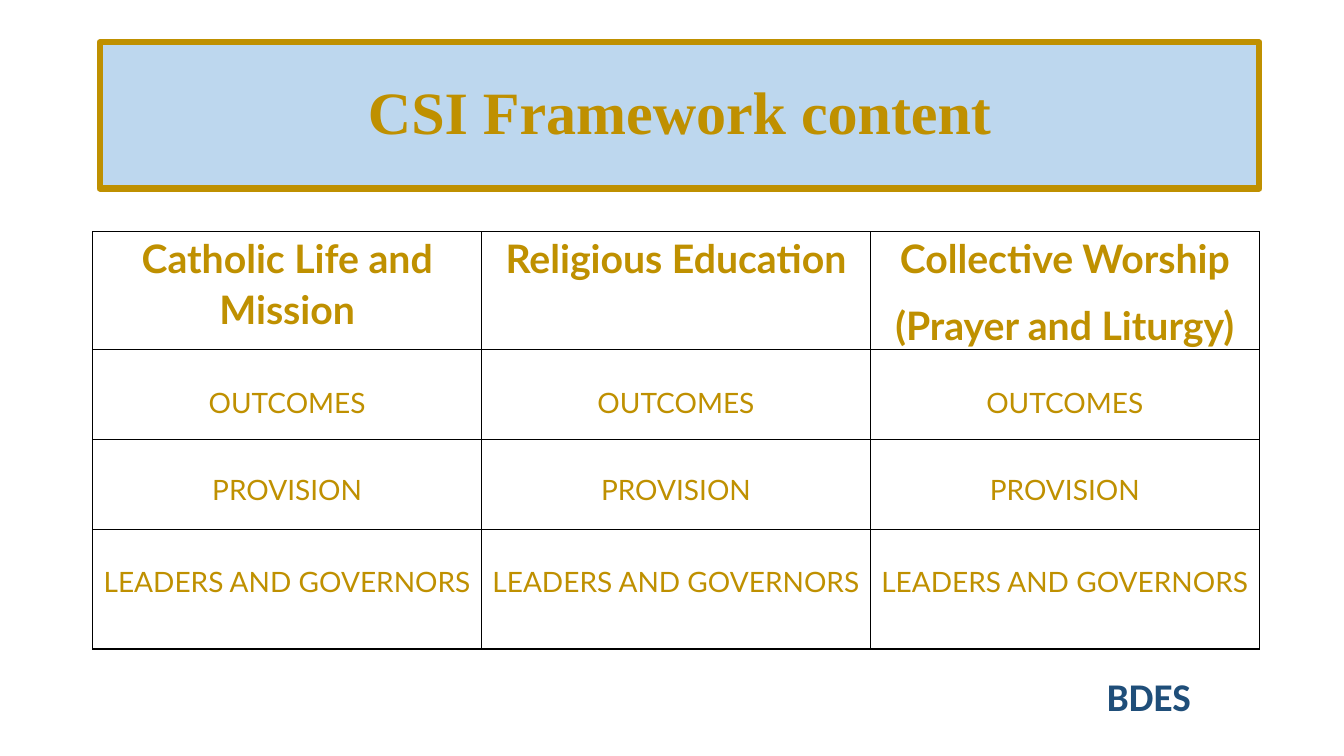
from pptx import Presentation
from pptx.util import Inches, Pt
from pptx.dml.color import RGBColor
from pptx.enum.shapes import MSO_SHAPE as Shape
from pptx.enum.text import PP_ALIGN as Align, MSO_ANCHOR as Anchor, MSO_AUTO_SIZE as AutoSize
from pptx.oxml.ns import qn
from lxml.etree import SubElement

COLORS = {"gold": "BF9000", "sky": "BDD7EE", "navy": "1F4E79", "black": "000000"}
HEADINGS = [["Catholic Life and Mission"], ["Religious Education"],
            ["Collective Worship", "(Prayer and Liturgy)"]]
# Label, row height and top inset in inches
ASPECTS = [("OUTCOMES", 0.89, 0.33), ("PROVISION", 0.89, 0.31),
           ("LEADERS AND GOVERNORS", 1.19, 0.33)]
HEADING_HEIGHT = 1.17


def rgb(name):
    return RGBColor.from_string(COLORS[name])


def add_run(p, text, size, font, color, bold=False):
    r = p.add_run()
    r.text = text
    r.font.size, r.font.name, r.font.bold = Pt(size), font, bold
    r.font.color.rgb = rgb(color)


def add_title(slide, box):
    sp = slide.shapes.add_shape(Shape.RECTANGLE, *map(Inches, box))
    sp.shadow.inherit = False
    sp.fill.solid()
    sp.fill.fore_color.rgb = rgb("sky")
    sp.line.color.rgb = rgb("gold")
    sp.line.width = Pt(4.5)
    tf = sp.text_frame
    tf.word_wrap = True
    tf.vertical_anchor = Anchor.MIDDLE
    p = tf.paragraphs[0]
    p.alignment, p.line_spacing = Align.CENTER, 0.9
    add_run(p, "CSI Framework content", 42.9, "Times New Roman", "gold", True)


def add_borders(cell):
    tcPr = cell._tc.get_or_add_tcPr()
    for index, side in enumerate(("lnL", "lnR", "lnT", "lnB")):
        ln = tcPr.makeelement(qn(f"a:{side}"), {"w": str(Pt(1))})
        fill = SubElement(ln, qn("a:solidFill"))
        SubElement(fill, qn("a:srgbClr"), val=COLORS["black"])
        tcPr.insert(index, ln)


def fill_cell(cell, lines, size, bold, top=0):
    cell.fill.background()
    add_borders(cell)
    cell.margin_left = cell.margin_right = Inches(0.07)
    cell.margin_top, cell.margin_bottom = Inches(top), 0
    tf = cell.text_frame
    for i, line in enumerate(lines):
        p = tf.add_paragraph() if i else tf.paragraphs[0]
        p.alignment, p.line_spacing = Align.CENTER, 1.07
        if i:
            p.space_before = Pt(6)
        if bold:
            p.space_after = Pt(6)
        add_run(p, line, size, "Lato", "gold", bold)


def add_framework(slide, left, top, width):
    heights = [HEADING_HEIGHT] + [height for _, height, _ in ASPECTS]
    box = (left, top, width, sum(heights))
    table = slide.shapes.add_table(len(heights), len(HEADINGS), *map(Inches, box)).table
    table.first_row = table.horz_banding = False
    for row, height in zip(table.rows, heights):
        row.height = Inches(height)
    for c, heading in enumerate(HEADINGS):
        table.columns[c].width = Inches(width / len(HEADINGS))
        fill_cell(table.cell(0, c), heading, 28, True)
        for r, (label, _, inset) in enumerate(ASPECTS, 1):
            fill_cell(table.cell(r, c), [label], 20, False, inset)


def add_footer(slide, box):
    tf = slide.shapes.add_textbox(*map(Inches, box)).text_frame
    tf.word_wrap = True
    tf.auto_size = AutoSize.SHAPE_TO_FIT_TEXT
    add_run(tf.paragraphs[0], "BDES", 28, "Calibri", "navy", True)


def main():
    prs = Presentation()
    prs.slide_width, prs.slide_height = Inches(13.33), Inches(7.5)
    slide = prs.slides.add_slide(prs.slide_layouts[6])
    # Title banner
    add_title(slide, (0.99, 0.42, 11.5, 1.45))
    # Footer mark
    add_footer(slide, (10.88, 6.62, 1.69, 0.57))
    # Framework table
    add_framework(slide, 0.92, 2.3, 11.57)
    prs.save("out.pptx")


if __name__ == "__main__":
    main()
